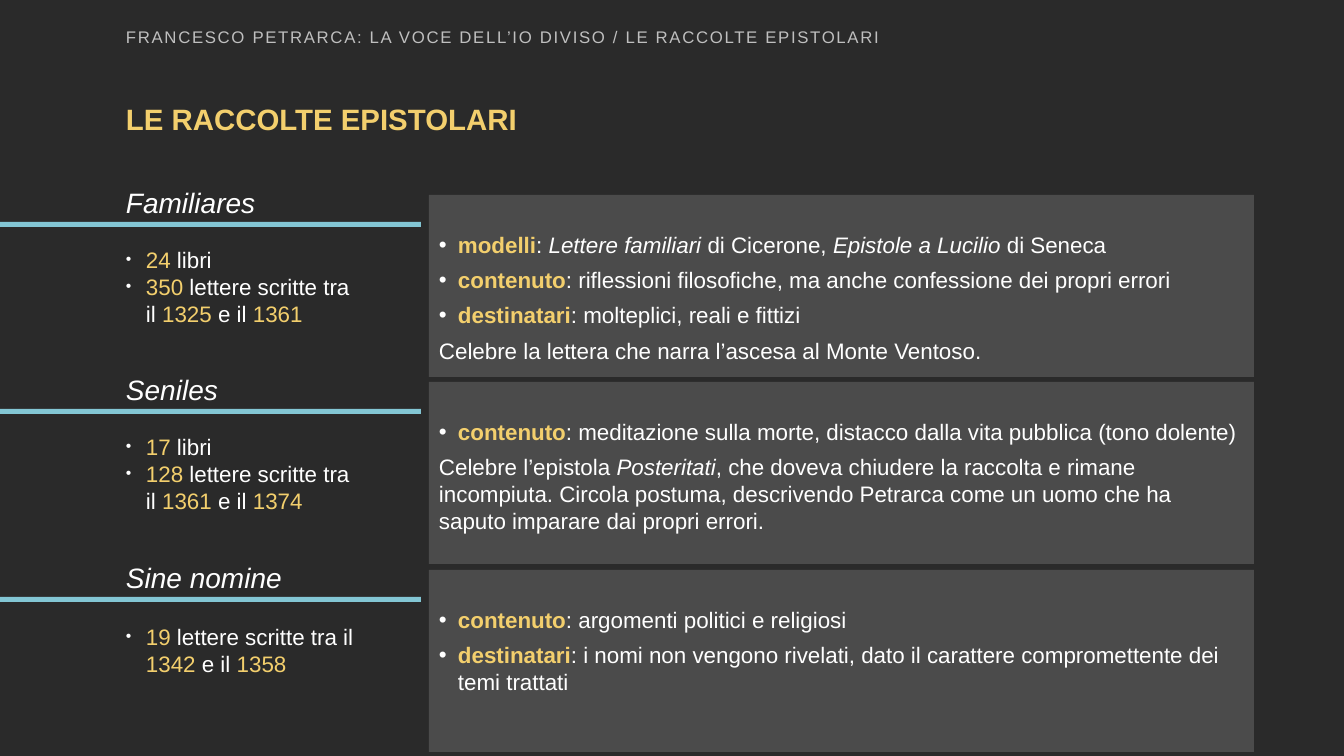
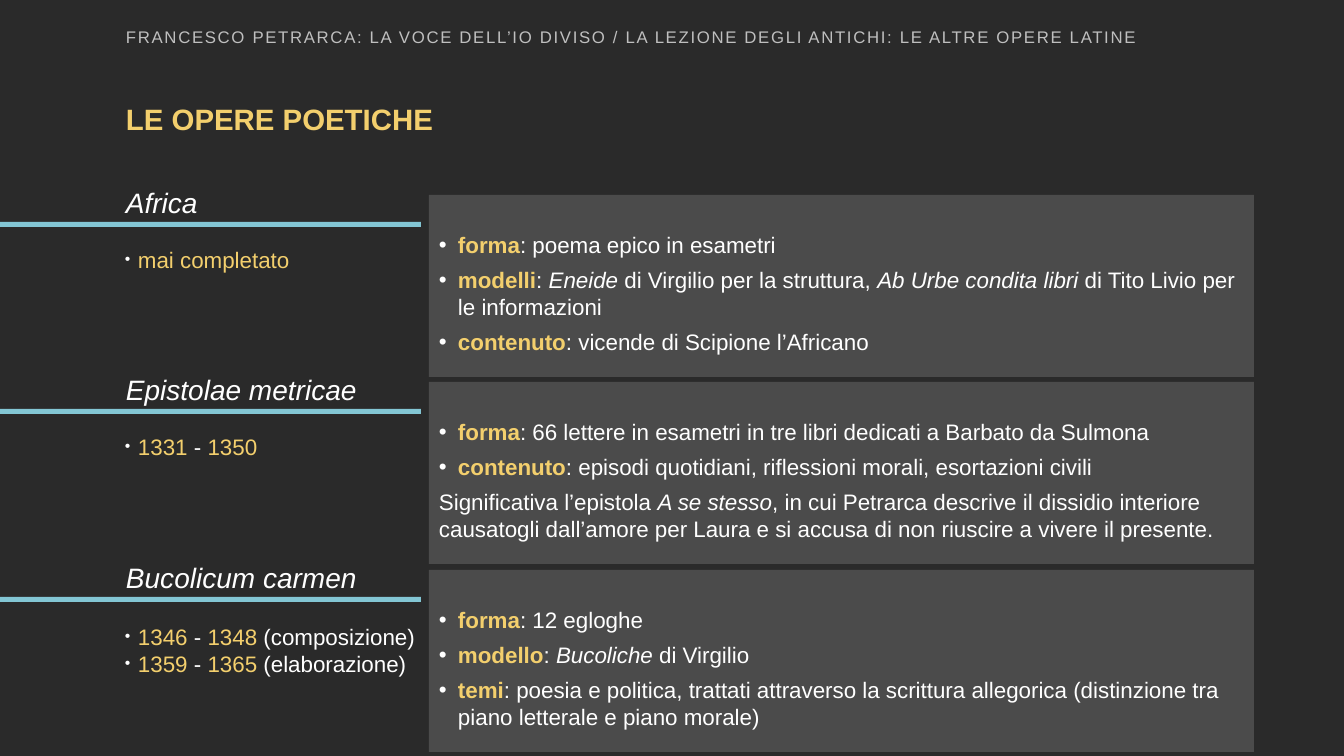
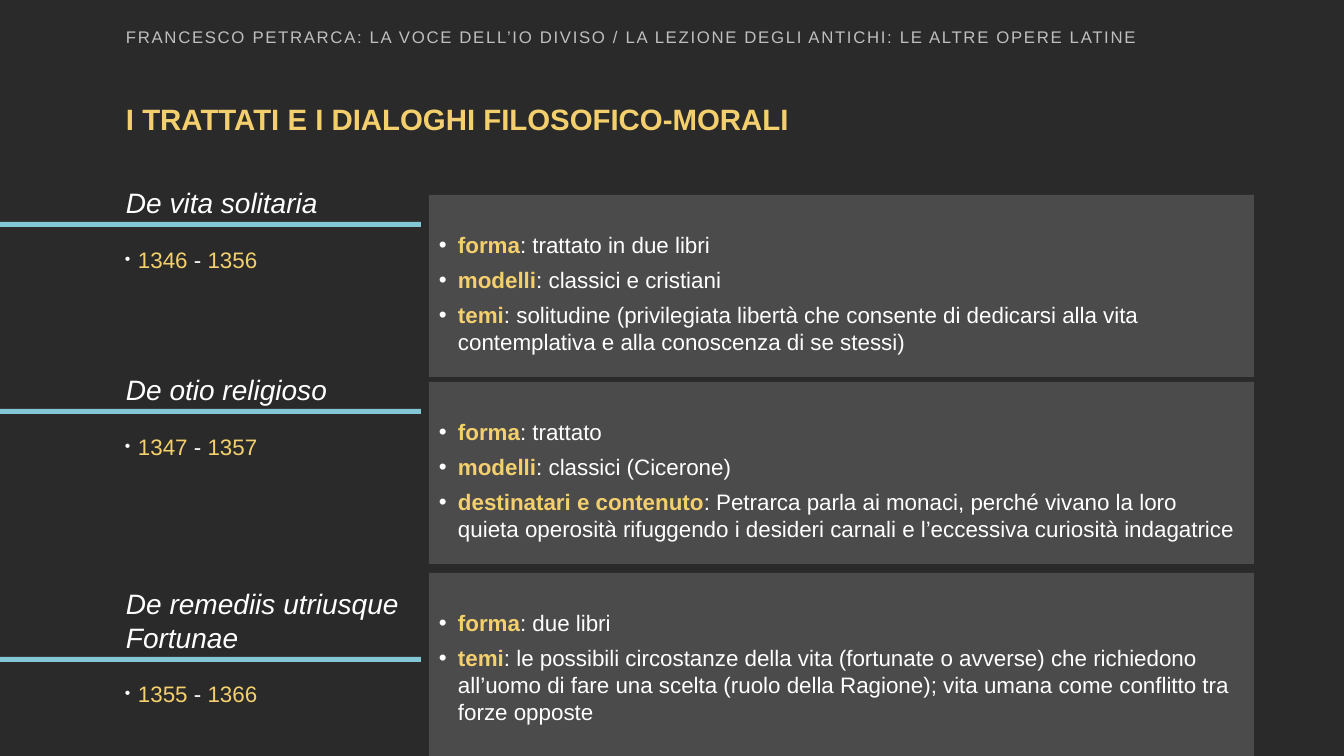
from dataclasses import dataclass

from lxml.etree import SubElement
from pptx import Presentation
from pptx.dml.color import RGBColor
from pptx.enum.shapes import MSO_SHAPE as Shape
from pptx.enum.text import MSO_ANCHOR as Anchor, MSO_AUTO_SIZE as AutoSize, PP_ALIGN as Align
from pptx.oxml.ns import qn
from pptx.util import Emu, Pt

SLIDE_WIDTH, SLIDE_HEIGHT = 1344, 756
EMU_PER_PX = 12192000 / SLIDE_WIDTH


@dataclass(frozen=True)
class Theme:
    font: str = "Arial"
    background: str = "2A2A2A"
    text: str = "FFFFFF"
    key: str = "F3CF6D"
    header: str = "BFBFBF"
    bar: str = "83C6D4"
    panel: str = "989898"
    panel_alpha: int = 30
    title_size: int = 21
    header_size: int = 12
    heading_size: int = 20
    body_size: int = 16


THEME = Theme()


@dataclass(frozen=True)
class Bullet:
    indent: int
    hanging: int
    percent: int = 100


PANEL_BULLET = Bullet(19, 19)
WIDE_BULLET = Bullet(24, 20, 70)
NARROW_BULLET = Bullet(16, 13, 70)


@dataclass(frozen=True)
class Section:
    """One work; in its texts *...* marks key words, _..._ italics and a leading "- " a bullet."""
    heading: str
    facts: tuple
    details: tuple
    facts_bullet: Bullet = NARROW_BULLET
    facts_lines: int = 1
    facts_width: int = 252
    facts_gap: int = 6
    heading_lines: int = 1
    bar_shift: int = 0
    panel_shift: int = 0
    panel_height: int = 182


LETTERS_HEADER = "FRANCESCO PETRARCA: LA VOCE DELL’IO DIVISO / LE RACCOLTE EPISTOLARI"
LATIN_HEADER = ("FRANCESCO PETRARCA: LA VOCE DELL’IO DIVISO / "
                "LA LEZIONE DEGLI ANTICHI: LE ALTRE OPERE LATINE")

SLIDES = (
    (LETTERS_HEADER, "LE RACCOLTE EPISTOLARI", (
        Section(
            "Familiares",
            ("- *24* libri", "- *350* lettere scritte tra il *1325* e il *1361*"),
            ("- *modelli*: _Lettere familiari_ di Cicerone, _Epistole a Lucilio_ di Seneca",
             "- *contenuto*: riflessioni filosofiche, ma anche confessione dei propri errori",
             "- *destinatari*: molteplici, reali e fittizi",
             "Celebre la lettera che narra l’ascesa al Monte Ventoso."),
            WIDE_BULLET, facts_lines=3),
        Section(
            "Seniles",
            ("- *17* libri", "- *128* lettere scritte tra il *1361* e il *1374*"),
            ("- *contenuto*: meditazione sulla morte, distacco dalla vita pubblica (tono dolente)",
             "Celebre l’epistola _Posteritati_, che doveva chiudere la raccolta e rimane "
             "incompiuta. Circola postuma, descrivendo Petrarca come un uomo che ha saputo "
             "imparare dai propri errori."),
            WIDE_BULLET, facts_lines=3),
        Section(
            "Sine nomine",
            ("- *19* lettere scritte tra il *1342* e il *1358*",),
            ("- *contenuto*: argomenti politici e religiosi",
             "- *destinatari*: i nomi non vengono rivelati, dato il carattere compromettente "
             "dei temi trattati"),
            WIDE_BULLET, facts_lines=2, facts_gap=8),
    )),
    (LATIN_HEADER, "LE OPERE POETICHE", (
        Section(
            "Africa",
            ("- *mai completato*",),
            ("- *forma*: poema epico in esametri",
             "- *modelli*: _Eneide_ di Virgilio per la struttura, _Ab Urbe condita libri_ "
             "di Tito Livio per le informazioni",
             "- *contenuto*: vicende di Scipione l’Africano")),
        Section(
            "Epistolae metricae",
            ("- *1331* - *1350*",),
            ("- *forma*: 66 lettere in esametri in tre libri dedicati a Barbato da Sulmona",
             "- *contenuto*: episodi quotidiani, riflessioni morali, esortazioni civili",
             "Significativa l’epistola _A se stesso_, in cui Petrarca descrive il dissidio "
             "interiore causatogli dall’amore per Laura e si accusa di non riuscire a vivere "
             "il presente.")),
        Section(
            "Bucolicum carmen",
            ("- *1346* - *1348* (composizione)", "- *1359* - *1365* (elaborazione)"),
            ("- *forma*: 12 egloghe",
             "- *modello*: _Bucoliche_ di Virgilio",
             "- *temi*: poesia e politica, trattati attraverso la scrittura allegorica "
             "(distinzione tra piano letterale e piano morale)"),
            facts_lines=2, facts_width=319, facts_gap=8),
    )),
    (LATIN_HEADER, "I TRATTATI E I DIALOGHI FILOSOFICO-MORALI", (
        Section(
            "De vita solitaria",
            ("- *1346* - *1356*",),
            ("- *forma*: trattato in due libri",
             "- *modelli*: classici e cristiani",
             "- *temi*: solitudine (privilegiata libertà che consente di dedicarsi alla vita "
             "contemplativa e alla conoscenza di se stessi)")),
        Section(
            "De otio religioso",
            ("- *1347* - *1357*",),
            ("- *forma*: trattato",
             "- *modelli*: classici (Cicerone)",
             "- *destinatari e contenuto*: Petrarca parla ai monaci, perché vivano la loro "
             "quieta operosità rifuggendo i desideri carnali e l’eccessiva curiosità "
             "indagatrice")),
        Section(
            "De remediis utriusque Fortunae",
            ("- *1355* - *1366*",),
            ("- *forma*: due libri",
             "- *temi*: le possibili circostanze della vita (fortunate o avverse) che "
             "richiedono all’uomo di fare una scelta (ruolo della Ragione); vita umana come "
             "conflitto tra forze opposte"),
            facts_width=319, facts_gap=5, heading_lines=2,
            bar_shift=60, panel_shift=3, panel_height=205),
    )),
)


def px(length):
    return Emu(round(length * EMU_PER_PX))


def rgb(color):
    return RGBColor.from_string(color)


def style_font(font, size, color, bold=False, italic=False):
    font.name = THEME.font
    font.size = Pt(size)
    font.color.rgb = rgb(color)
    font.bold = bold
    font.italic = italic


def set_frame(frame, top_inset=5, anchor=Anchor.TOP):
    frame.word_wrap = True
    frame.auto_size = AutoSize.NONE
    frame.vertical_anchor = anchor
    frame.margin_left = frame.margin_right = px(10)
    frame.margin_top, frame.margin_bottom = px(top_inset), px(5)


def add_text_box(slide, left, top, width, height, **frame_options):
    frame = slide.shapes.add_textbox(px(left), px(top), px(width), px(height)).text_frame
    set_frame(frame, **frame_options)
    return frame


def add_rectangle(slide, left, top, width, height, color):
    rectangle = slide.shapes.add_shape(
        Shape.RECTANGLE, px(left), px(top), px(width), px(height))
    rectangle.shadow.inherit = False
    rectangle.line.fill.background()
    rectangle.fill.solid()
    rectangle.fill.fore_color.rgb = rgb(color)
    return rectangle


def set_alpha(shape, percent):
    color = shape.fill._xPr.find(qn("a:solidFill"))[0]
    SubElement(color, qn("a:alpha"), val=str(percent * 1000))


def add_bullet(paragraph, bullet):
    properties = paragraph._p.get_or_add_pPr()
    properties.set("marL", str(px(bullet.indent)))
    properties.set("indent", str(-px(bullet.hanging)))
    SubElement(SubElement(properties, qn("a:buClr")), qn("a:srgbClr"), val=THEME.text)
    SubElement(properties, qn("a:buSzPct"), val=str(bullet.percent * 1000))
    SubElement(properties, qn("a:buFont"), typeface=THEME.font)
    SubElement(properties, qn("a:buChar"), char="•")


def add_marked_runs(paragraph, marked, bold_keys):
    for i, stretch in enumerate(marked.split("*")):
        for j, words in enumerate(stretch.split("_")):
            if not words:
                continue
            run = paragraph.add_run()
            run.text = words
            if i % 2:
                run.font.color.rgb = rgb(THEME.key)
                run.font.bold = bold_keys
            if j % 2:
                run.font.italic = True


def fill_list(frame, items, bullet, bold_keys=False, gap=0):
    for i, item in enumerate(items):
        paragraph = frame.add_paragraph() if i else frame.paragraphs[0]
        paragraph.alignment = Align.LEFT
        if i and gap:
            paragraph.space_before = Pt(gap)
        if item.startswith("- "):
            add_bullet(paragraph, bullet)
        style_font(paragraph.font, THEME.body_size, THEME.text)
        add_marked_runs(paragraph, item.removeprefix("- "), bold_keys)


def add_header(slide, header):
    paragraph = add_text_box(slide, 116, 22, 1159, 30, anchor=Anchor.MIDDLE).paragraphs[0]
    style_font(paragraph.font, THEME.header_size, THEME.header)
    run = paragraph.add_run()
    run.text = header
    run.font._element.set("spc", "120")


def set_title(slide, title):
    frame = slide.shapes.title.text_frame
    set_frame(frame)
    frame.text = title
    paragraph = frame.paragraphs[0]
    paragraph.alignment = Align.LEFT
    paragraph.line_spacing = 0.9
    style_font(paragraph.font, THEME.title_size, THEME.key, bold=True)


def add_section(slide, section, row):
    row_top = 195 + row * 375 // 2
    bar_top = row_top + 27 + section.bar_shift
    add_rectangle(slide, 0, bar_top, 421, 5, THEME.bar)

    extra = 33 * (section.heading_lines - 1)
    heading = add_text_box(slide, 116, bar_top - 42 - extra, 305, 44 + extra).paragraphs[0]
    heading.text = section.heading
    style_font(heading.font, THEME.heading_size, THEME.text, italic=True)

    panel = add_rectangle(slide, 429, row_top + section.panel_shift,
                          825, section.panel_height, THEME.panel)
    set_alpha(panel, THEME.panel_alpha)
    set_frame(panel.text_frame, top_inset=36)
    fill_list(panel.text_frame, section.details, PANEL_BULLET, bold_keys=True, gap=6)

    facts = add_text_box(slide, 112, bar_top + section.facts_gap, section.facts_width,
                         23 + 27 * section.facts_lines, top_inset=18)
    fill_list(facts, section.facts, section.facts_bullet)


def prepare_layout(presentation):
    """Set the background and the title's place once for all slides."""
    background = presentation.slide_master.background.fill
    background.solid()
    background.fore_color.rgb = rgb(THEME.background)
    layout = presentation.slide_layouts.get_by_name("Title Only")
    title = layout.placeholders[0]
    title.left, title.top, title.width, title.height = map(px, (116, 100, 1111, 42))
    return layout


def main():
    presentation = Presentation()
    presentation.slide_width, presentation.slide_height = px(SLIDE_WIDTH), px(SLIDE_HEIGHT)
    layout = prepare_layout(presentation)
    for header, title, sections in SLIDES:
        slide = presentation.slides.add_slide(layout)
        set_title(slide, title)
        add_header(slide, header)
        for row, section in enumerate(sections):
            add_section(slide, section, row)
    presentation.save("out.pptx")


if __name__ == "__main__":
    main()
